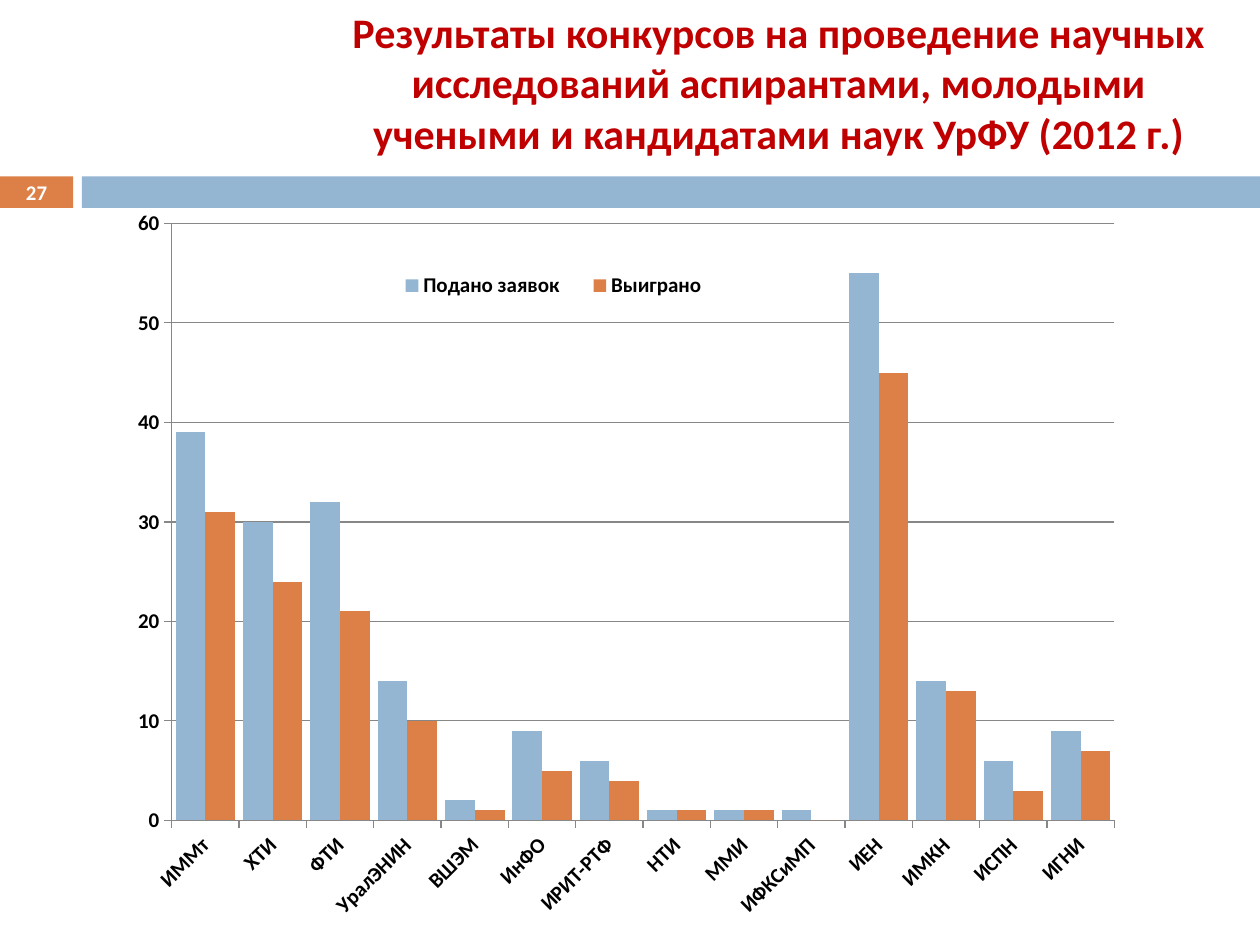
from dataclasses import dataclass

import lxml.etree
import pptx
import pptx.chart.data
import pptx.dml.color
import pptx.enum.chart
import pptx.enum.shapes
import pptx.enum.text
import pptx.oxml
import pptx.oxml.ns
import pptx.util

Inches = pptx.util.Inches
FONT = "Calibri"
BLUE, ORANGE, RED = "94B6D2", "DD8047", "C00000"
BLACK, WHITE, GRAY = "000000", "FFFFFF", "878787"


@dataclass
class Band:
    left: float
    width: float
    color: str
    text: str = ""


@dataclass
class Series:
    name: str
    color: str
    values: tuple


BANDS = [Band(0, 0.58, ORANGE, "27"), Band(0.65, 9.35, BLUE)]
UNITS = ["ИММт", "ХТИ", "ФТИ", "УралЭНИН", "ВШЭМ", "ИнФО", "ИРИТ-РТФ",
         "НТИ", "ММИ", "ИФКСиМП", "ИЕН", "ИМКН", "ИСПН", "ИГНИ"]
SERIES = [
    Series("Подано заявок", BLUE, (39, 30, 32, 14, 2, 9, 6, 1, 1, 1, 55, 14, 6, 9)),
    Series("Выиграно", ORANGE, (31, 24, 21, 10, 1, 5, 4, 1, 1, 0, 45, 13, 3, 7)),
]


def rgb(color: str):
    return pptx.dml.color.RGBColor.from_string(color)


def style(font, size: float, color: str) -> None:
    font.name, font.size, font.bold = FONT, pptx.util.Pt(size), True
    font.color.rgb = rgb(color)


def fill(part, color: str) -> None:
    part.fill.solid()
    part.fill.fore_color.rgb = rgb(color)


def write(shape, text: str, size: float, color: str) -> None:
    frame = shape.text_frame
    frame.word_wrap = True
    frame.vertical_anchor = pptx.enum.text.MSO_ANCHOR.MIDDLE
    frame.text = text
    line = frame.paragraphs[0]
    line.alignment = pptx.enum.text.PP_ALIGN.CENTER
    style(line.font, size, color)


def add_band(slide, band: Band) -> None:
    shape = slide.shapes.add_shape(
        pptx.enum.shapes.MSO_SHAPE.RECTANGLE,
        Inches(band.left), Inches(1.4), Inches(band.width), Inches(0.25))
    shape.shadow.inherit = False
    fill(shape, band.color)
    shape.line.fill.background()
    if band.text:
        frame = shape.text_frame
        frame.margin_top = frame.margin_bottom = 0
        write(shape, band.text, 11.9, WHITE)


def layout(x: float, y: float, w: float, h: float, inner: bool = False):
    """Build a manual layout from fractions of the chart area."""
    target = '<c:layoutTarget val="inner"/>' if inner else ""
    return pptx.oxml.parse_xml(
        f'<c:layout {pptx.oxml.ns.nsdecls("c")}><c:manualLayout>{target}'
        '<c:xMode val="edge"/><c:yMode val="edge"/>'
        f'<c:x val="{x}"/><c:y val="{y}"/><c:w val="{w}"/><c:h val="{h}"/>'
        '</c:manualLayout></c:layout>')


def place(part, box) -> None:
    """Put a layout into a plot area or legend in schema order."""
    name = pptx.oxml.ns.qn("c:layout")
    for old in part.findall(name):
        part.remove(old)
    pos = part.find(pptx.oxml.ns.qn("c:legendPos"))
    part.insert(0 if pos is None else part.index(pos) + 1, box)


def style_axis(axis) -> None:
    style(axis.tick_labels.font, 12, BLACK)
    axis.major_tick_mark = pptx.enum.chart.XL_TICK_MARK.OUTSIDE
    axis.format.line.color.rgb = rgb(GRAY)


def add_chart(slide) -> None:
    data = pptx.chart.data.CategoryChartData(number_format="#,##0")
    data.categories = UNITS
    for item in SERIES:
        data.add_series(item.name, item.values)
    chart = slide.shapes.add_chart(
        pptx.enum.chart.XL_CHART_TYPE.COLUMN_CLUSTERED,
        Inches(0.67), Inches(1.62), Inches(8.66), Inches(5.88), data).chart
    chart.has_title = False
    chart.font.name, chart.font.size = FONT, pptx.util.Pt(10)

    plot = chart.plots[0]
    plot.gap_width, plot.overlap = 26, 0
    plot.vary_by_categories = False
    for bars, item in zip(plot.series, SERIES):
        fill(bars.format, item.color)

    cats, vals = chart.category_axis, chart.value_axis
    for axis in (cats, vals):
        style_axis(axis)
    body = cats._element.find(".//" + pptx.oxml.ns.qn("a:bodyPr"))
    body.set("rot", "-2700000")
    body.set("vert", "horz")
    vals.minimum_scale, vals.maximum_scale, vals.major_unit = 0, 60, 10
    vals.has_major_gridlines = True
    vals.major_gridlines.format.line.color.rgb = rgb(GRAY)

    chart.has_legend = True
    legend = chart.legend
    legend.position = pptx.enum.chart.XL_LEGEND_POSITION.RIGHT
    legend.include_in_layout = False
    style(legend.font, 12, BLACK)
    place(legend._element, layout(0.27, 0.08, 0.32, 0.06))
    area = chart._chartSpace.find(".//" + pptx.oxml.ns.qn("c:plotArea"))
    place(area, layout(0.08, 0.026, 0.864, 0.806, inner=True))


def main() -> None:
    deck = pptx.Presentation()
    deck.slide_width, deck.slide_height = Inches(10), Inches(7.5)
    slide = deck.slides.add_slide(deck.slide_layouts[5])
    for band in BANDS:
        add_band(slide, band)
    title = slide.shapes.title
    title.left, title.top = Inches(2.48), Inches(0.07)
    title.width, title.height = Inches(7.4), Inches(1.16)
    write(title, "Результаты конкурсов на проведение научных исследований "
          "аспирантами, молодыми учеными и кандидатами наук УрФУ (2012 г.)", 24, RED)
    add_chart(slide)
    deck.save("out.pptx")


if __name__ == "__main__":
    main()
